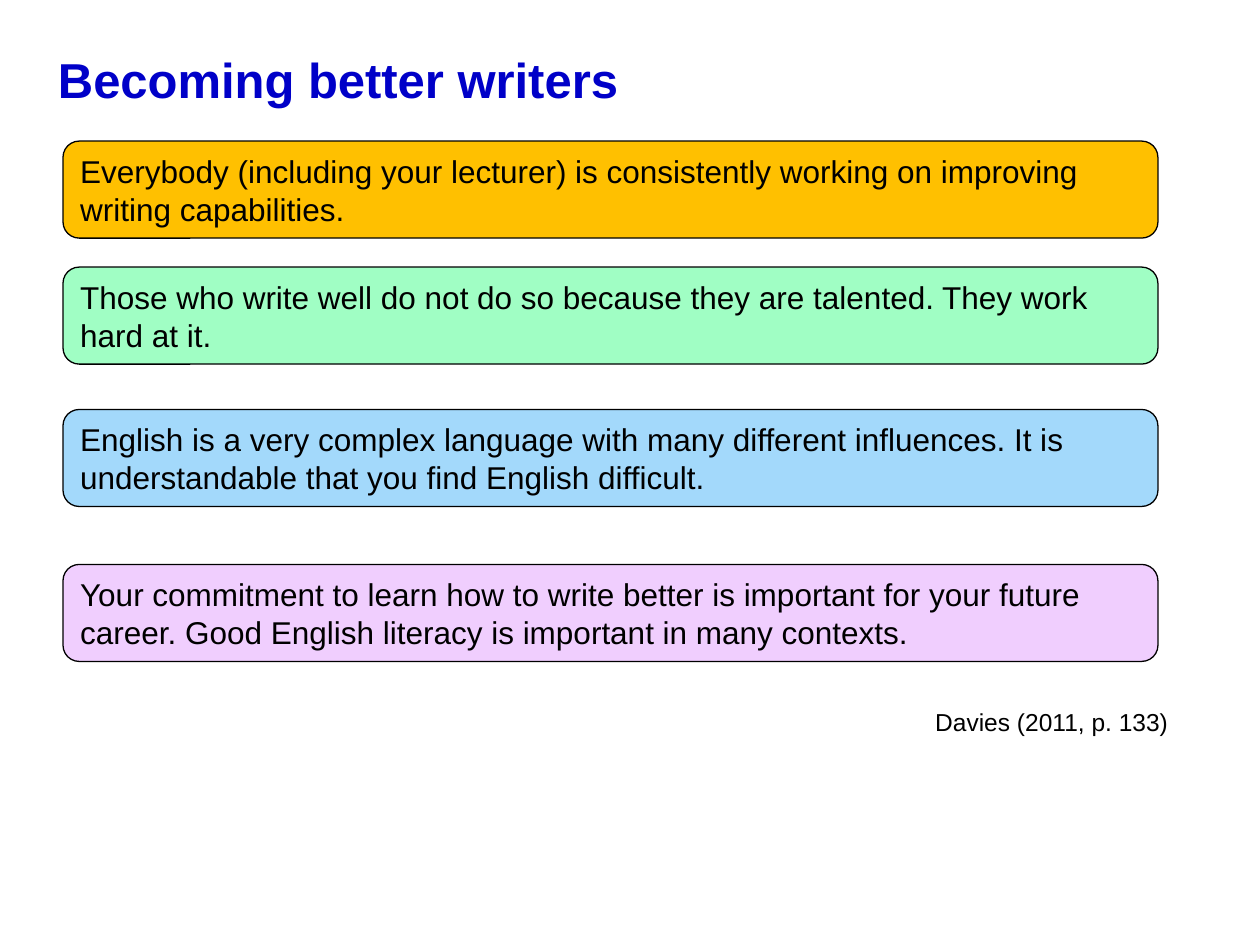
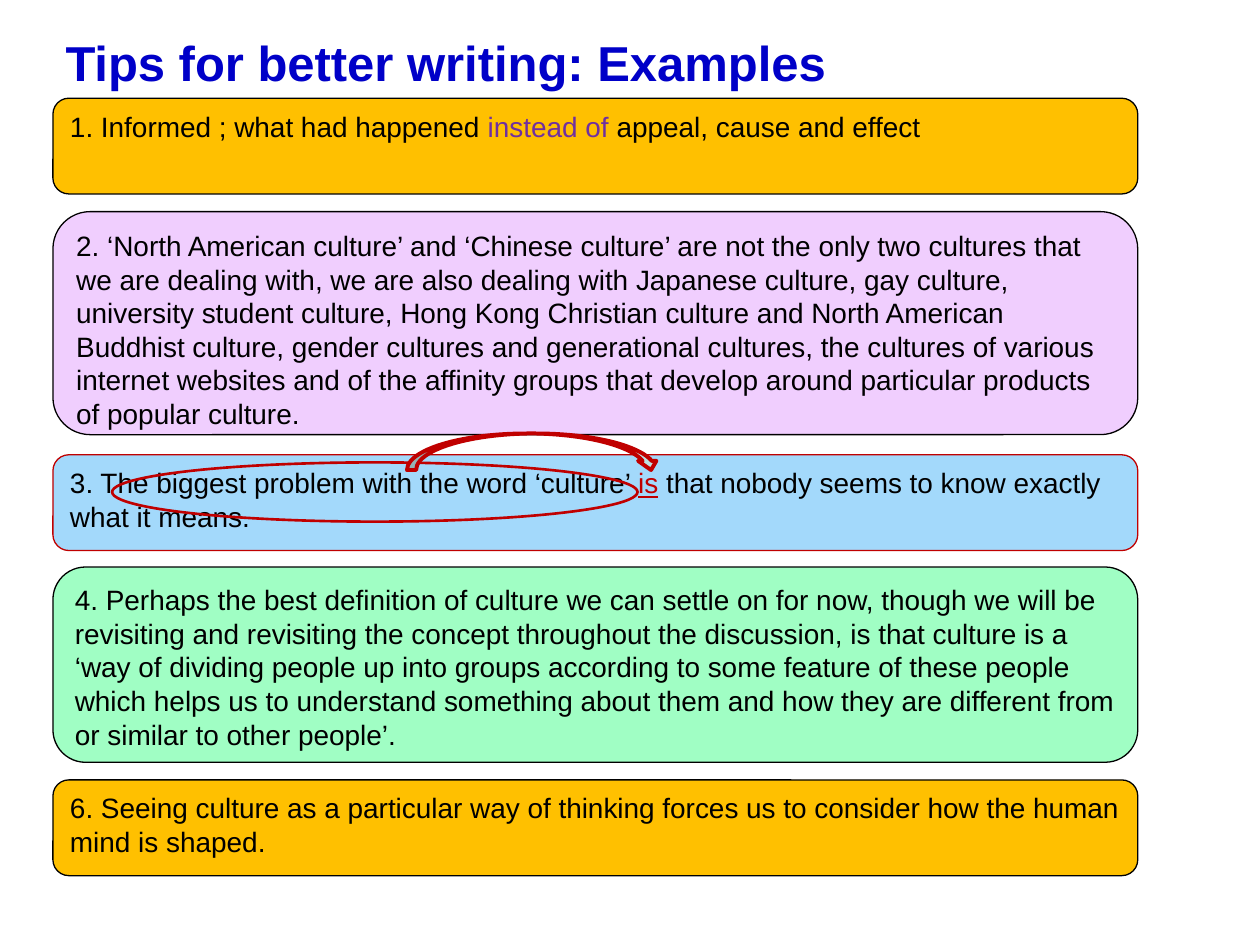
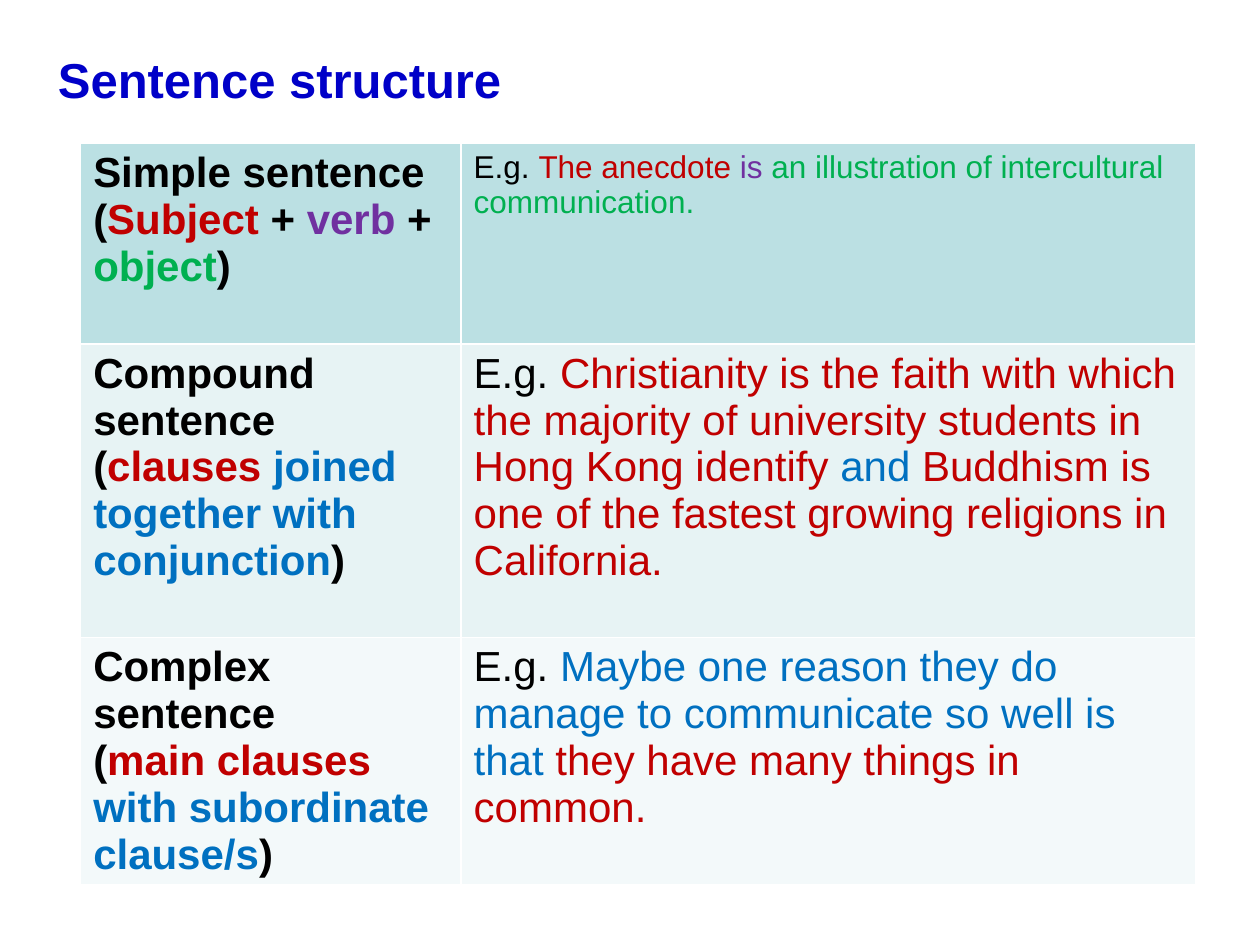
from dataclasses import dataclass
from typing import Any

from pptx import Presentation
from pptx.dml.color import RGBColor
from pptx.enum.shapes import MSO_SHAPE
from pptx.enum.text import MSO_ANCHOR, MSO_AUTO_SIZE, PP_ALIGN
from pptx.util import Inches, Pt

FONT = "Arial"
BLACK, TITLE_BLUE = "000000", "0000C8"
RED, PURPLE, GREEN, BLUE = "C00000", "7030A0", "00B050", "0070C0"
AMBER, MINT, SKY, LILAC, TEAL = "FFC000", "A0FEC4", "A3D9FB", "F0CEFE", "BBE0E3"
ROW_FILLS = (TEAL, "E7F3F4", "F3F9FA")
TITLE_FRAME = {
    "word_wrap": True,
    "auto_size": MSO_AUTO_SIZE.NONE,
    "vertical_anchor": MSO_ANCHOR.TOP,
    "margin_left": Inches(0.1),
    "margin_right": Inches(0.1),
    "margin_top": Inches(0.1),
    "margin_bottom": Inches(0.05),
}
BOX_FRAME = {"word_wrap": True, "vertical_anchor": MSO_ANCHOR.TOP}


@dataclass(frozen=True)
class Run:
    text: str
    color: str = BLACK
    underline: bool = False


@dataclass(frozen=True)
class Box:
    top: float
    height: float
    fill: str
    runs: tuple[Run, ...]
    line: str = BLACK


@dataclass(frozen=True)
class SentenceType:
    name: str
    pattern: tuple[Run, ...]
    example: tuple[Run, ...]
    height: float
    example_size: int = 24


REMARKS = (
    (1.12, AMBER, "Everybody (including your lecturer) is consistently working on improving writing capabilities."),
    (2.12, MINT, "Those who write well do not do so because they are talented. They work hard at it."),
    (3.25, SKY, "English is a very complex language with many different influences. It is understandable that you find English difficult."),
    (4.48, LILAC, "Your commitment to learn how to write better is important for your future career. Good English literacy is important in many contexts."),
)

TIPS = (
    Box(0.78, 0.76, AMBER, (
        Run("1. Informed ; what had happened "),
        Run("instead of ", PURPLE),
        Run("appeal, cause and effect"),
    )),
    Box(1.68, 1.77, LILAC, (Run(
        "2. ‘North American culture’ and ‘Chinese culture’ are not the only two cultures that we are "
        "dealing with, we are also dealing with Japanese culture, gay culture, university student culture, "
        "Hong Kong Christian culture and North American Buddhist culture, gender cultures and generational "
        "cultures, the cultures of various internet websites and of the affinity groups that develop around "
        "particular products of popular culture."
    ),)),
    Box(3.61, 0.76, SKY, (
        Run("3. The biggest problem with the word ‘culture’ "),
        Run("is", RED, True),
        Run(" that nobody seems to know exactly what it means."),
    ), RED),
    Box(4.5, 1.55, MINT, (Run(
        "4. Perhaps the best definition of culture we can settle on for now, though we will be revisiting "
        "and revisiting the concept throughout the discussion, is that culture is a ‘way of dividing people "
        "up into groups according to some feature of these people which helps us to understand something "
        "about them and how they are different from or similar to other people’."
    ),)),
    Box(6.19, 0.76, AMBER, (Run(
        "6. Seeing culture as a particular way of thinking forces us to consider how the human mind is shaped."
    ),)),
)

SENTENCE_TYPES = (
    SentenceType(
        "Simple sentence",
        (Run("("), Run("Subject", RED), Run(" + "), Run("verb", PURPLE), Run(" + "), Run("object", GREEN), Run(")")),
        (Run("E.g. "), Run("The anecdote ", RED), Run("is ", PURPLE),
         Run("an illustration of intercultural communication.", GREEN)),
        1.59, 18,
    ),
    SentenceType(
        "Compound sentence",
        (Run("("), Run("clauses ", RED), Run("joined together with conjunction", BLUE), Run(")")),
        (Run("E.g. "),
         Run("Christianity is the faith with which the majority of university students in Hong Kong identify ", RED),
         Run("and ", BLUE),
         Run("Buddhism is one of the fastest growing religions in California.", RED)),
        2.33,
    ),
    SentenceType(
        "Complex sentence",
        (Run("("), Run("main clauses ", RED), Run("with subordinate clause/s", BLUE), Run(")")),
        (Run("E.g. "), Run("Maybe one reason they do manage to communicate so well is that ", BLUE),
         Run("they have many things in common.", RED)),
        1.95,
    ),
)


def rgb(color: str) -> RGBColor:
    return RGBColor.from_string(color)


def set_values(target: Any, values: dict[str, Any]) -> None:
    for name, value in values.items():
        setattr(target, name, value)


def write_runs(paragraph: Any, runs: tuple[Run, ...], size: int, bold: bool = False) -> None:
    for item in runs:
        run = paragraph.add_run()
        run.text = item.text
        set_values(run.font, {"name": FONT, "size": Pt(size), "bold": bold, "underline": item.underline})
        run.font.color.rgb = rgb(item.color)


def add_titled_slide(presentation: Any, title: str, left: float = 0.36, top: float = 0.29) -> Any:
    slide = presentation.slides.add_slide(presentation.slide_layouts[5])
    shape = slide.shapes.title
    set_values(shape, {"left": Inches(left), "top": Inches(top), "width": Inches(9.41), "height": Inches(0.73)})
    set_values(shape.text_frame, TITLE_FRAME)
    paragraph = shape.text_frame.paragraphs[0]
    paragraph.alignment = PP_ALIGN.LEFT
    write_runs(paragraph, (Run(title, TITLE_BLUE),), 28, True)
    return slide


def add_outlined_shape(slide: Any, preset: MSO_SHAPE, left: float, top: float, width: float, height: float,
                       line: str, weight: float, fill: str | None = None) -> Any:
    shape = slide.shapes.add_shape(preset, Inches(left), Inches(top), Inches(width), Inches(height))
    shape.shadow.inherit = False
    shape.line.color.rgb = rgb(line)
    shape.line.width = Pt(weight)
    if fill:
        shape.fill.solid()
        shape.fill.fore_color.rgb = rgb(fill)
    else:
        shape.fill.background()
    return shape


def add_box(slide: Any, box: Box, left: float, width: float, size: int) -> None:
    shape = add_outlined_shape(slide, MSO_SHAPE.ROUNDED_RECTANGLE, left, box.top, width, box.height,
                               box.line, 0.75, box.fill)
    set_values(shape.text_frame, BOX_FRAME)
    paragraph = shape.text_frame.paragraphs[0]
    paragraph.alignment = PP_ALIGN.LEFT
    write_runs(paragraph, box.runs, size)


def build_becoming_writers(presentation: Any) -> None:
    slide = add_titled_slide(presentation, "Becoming better writers")
    for top, fill, text in REMARKS:
        add_box(slide, Box(top, 0.77, fill, (Run(text),)), 0.5, 8.69, 18)
    citation = slide.shapes.add_textbox(Inches(6.38), Inches(5.56), Inches(2.99), Inches(0.34))
    citation.text_frame.word_wrap = True
    paragraph = citation.text_frame.paragraphs[0]
    paragraph.alignment = PP_ALIGN.RIGHT
    write_runs(paragraph, (Run("Davies (2011, p. 133)"),), 14)


def build_tips(presentation: Any) -> None:
    slide = add_titled_slide(presentation, "Tips for better writing: Examples", 0.42, 0.16)
    for tip in TIPS:
        add_box(slide, tip, 0.42, 8.61, 16)
    add_outlined_shape(slide, MSO_SHAPE.OVAL, 0.89, 3.67, 4.17, 0.47, RED, 1.5)
    add_outlined_shape(slide, MSO_SHAPE.CURVED_DOWN_ARROW, 3.23, 3.44, 2.01, 0.29, RED, 2.25, TEAL)


def build_sentence_structure(presentation: Any) -> None:
    slide = add_titled_slide(presentation, "Sentence structure")
    total_height = sum(item.height for item in SENTENCE_TYPES)
    table = slide.shapes.add_table(len(SENTENCE_TYPES), 2, Inches(0.64), Inches(1.14),
                                   Inches(8.85), Inches(total_height)).table
    for column, width in zip(table.columns, (3.02, 5.83)):
        column.width = Inches(width)
    for row, item, fill in zip(table.rows, SENTENCE_TYPES, ROW_FILLS):
        row.height = Inches(item.height)
        for cell in row.cells:
            cell.fill.solid()
            cell.fill.fore_color.rgb = rgb(fill)
        kind, example = (cell.text_frame for cell in row.cells)
        write_runs(kind.paragraphs[0], (Run(item.name),), 24, True)
        write_runs(kind.add_paragraph(), item.pattern, 24, True)
        write_runs(example.paragraphs[0], item.example, item.example_size)


def main() -> None:
    presentation = Presentation()
    set_values(presentation, {"slide_width": Inches(10), "slide_height": Inches(7.5)})
    build_becoming_writers(presentation)
    build_tips(presentation)
    build_sentence_structure(presentation)
    presentation.save("out.pptx")


if __name__ == "__main__":
    main()
